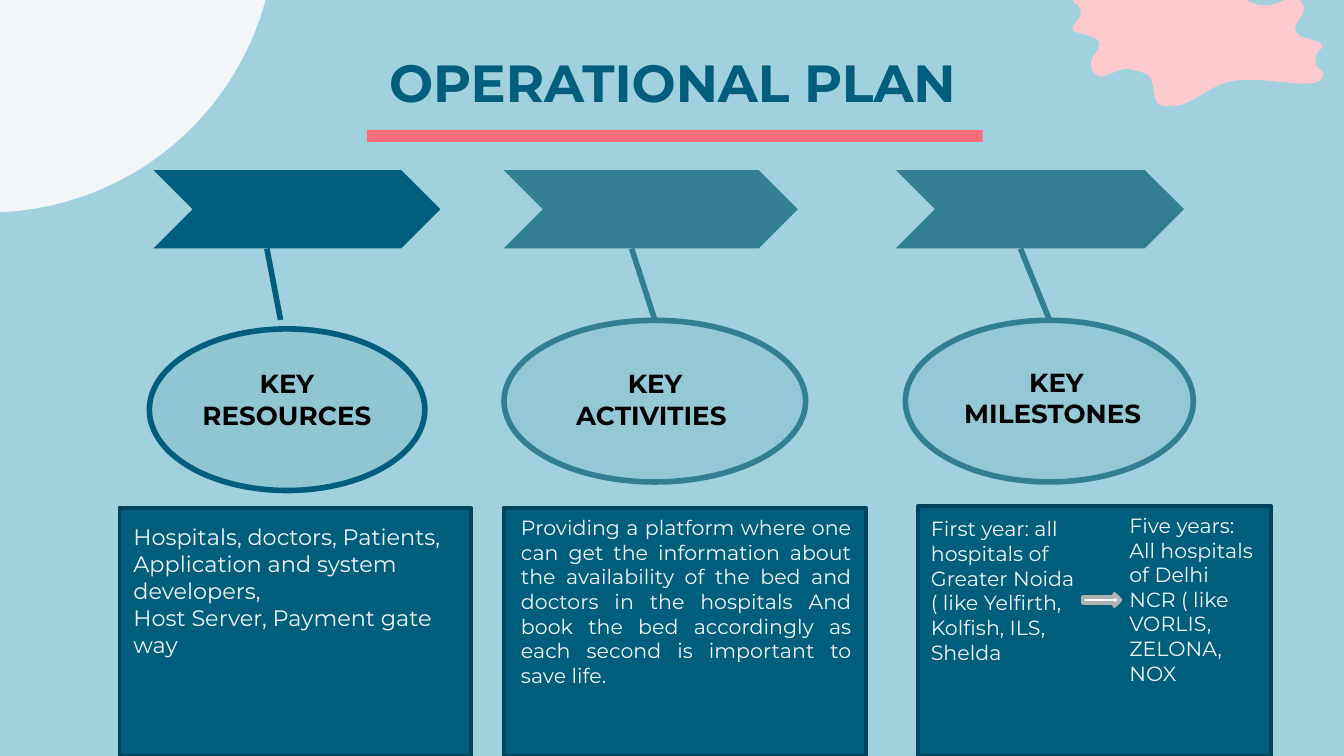
from lxml.etree import SubElement as Sub
from pptx import Presentation
from pptx.dml.color import RGBColor as RGB
from pptx.enum.shapes import MSO_CONNECTOR as Link, MSO_SHAPE as Kind
from pptx.enum.text import MSO_ANCHOR as Anchor, PP_ALIGN as Align
from pptx.oxml.ns import qn
from pptx.util import Pt

FONT = "Montserrat"
HUES = {
    "sky": "A1D1DE", "pale": "F2F6F8", "coral": "FC6D78", "blush": "FECACE",
    "navy": "005E7D", "teal": "337E92", "edge": "00445B", "gray": "B0B3B4",
    "black": "000000",
}

# Outlines in hundredths of an inch: start, then Bézier triples
UNIT = Pt(0.72)
BLOB = (984, 53), [
    (983, 51, 981, 52, 980, 50), (978, 48, 979, 44, 979, 43),
    (980, 37, 985, 36, 984, 34), (984, 29, 966, 30, 964, 23),
    (962, 17, 972, 12, 970, 5), (970, 4, 968, 0, 965, -2),
    (964, -2, 963, -2, 962, -2), (957, -2, 951, 4, 942, 4),
    (941, 4, 940, 4, 940, 4), (937, 4, 933, 3, 929, 1),
    (920, -3, 925, -17, 918, -21), (917, -22, 915, -22, 911, -22),
    (894, -22, 884, -8, 866, -4), (848, 0, 823, -8, 808, -8),
    (807, -8, 804, -7, 801, -5), (799, -4, 798, -1, 799, 2),
    (800, 3, 802, 3, 803, 5), (805, 7, 804, 10, 804, 11),
    (802, 17, 798, 18, 798, 21), (798, 26, 816, 25, 818, 32),
    (819, 38, 810, 42, 812, 50), (812, 50, 813, 55, 816, 56),
    (817, 57, 818, 57, 819, 57), (825, 57, 831, 51, 840, 51),
    (841, 51, 841, 51, 842, 52), (844, 52, 848, 53, 853, 55),
    (861, 60, 856, 73, 863, 78), (863, 78, 865, 79, 870, 79),
    (886, 80, 897, 65, 914, 61), (933, 56, 961, 64, 976, 62),
    (977, 62, 980, 62, 983, 59), (984, 58, 985, 55, 984, 53),
]
SPOT = (927, -13), [
    (929, -17, 935, -18, 940, -15), (946, -13, 949, -7, 947, -4),
    (945, 0, 939, 1, 934, -1), (928, -4, 925, -9, 927, -13),
]

# Per column: hue, chevron (x, w), oval (x, y, w), stem (x1, x2),
# card (x, y, w), label (x, y, w) and label text
COLS = [
    ("navy", (82.3, 153.7), (80, 176.2, 147.6), (143, 150.3), (64, 272, 188.5),
     (100, 193.5, 107.5), "KEY RESOURCES "),
    ("teal", (270, 157.5), (270, 171.6, 161.6), (338.4, 350.8), (269.8, 272, 194.2),
     (297.2, 193.5, 107.5), "KEY ACTIVITIES "),
    ("teal", (480, 154.3), (485, 171.6, 154.3), (546.7, 562.2), (491.6, 271.2, 189.5),
     (504.7, 192.8, 122.5), "KEY MILESTONES "),
]

# Card text: box, paragraphs, format
NOTES = [
    ((64.4, 276.8, 188.5, 80), ["Hospitals, doctors, Patients, Application and system developers,",
     "Host Server, Payment gate way"], {"size": 12}),
    ((272, 272.3, 191.3, 101), ["Providing a platform where one can get the information about "
     "the availability of the bed and doctors in the hospitals And book the bed accordingly "
     "as each second is important to save life. "], {"align": Align.JUSTIFY}),
    ((491.6, 273, 95.4, 87), ["First year: all hospitals of Greater Noida "
     "( like Yelfirth, Kolfish, ILS, Shelda"], {}),
    ((597.9, 271.2, 83.7, 101), ["Five years:",
     "All hospitals of Delhi NCR ( like VORLIS, ZELONA, NOX"], {}),
]


def hue(name):
    return RGB.from_string(HUES[name])


def paint(shape, fill, line=None, width=0, alpha=None):
    shape.shadow.inherit = False
    shape.fill.solid()
    shape.fill.fore_color.rgb = hue(fill)
    if alpha:
        clr = shape._element.spPr.find(qn("a:solidFill")).find(qn("a:srgbClr"))
        Sub(clr, qn("a:alpha"), val=str(alpha * 1000))
    if line:
        shape.line.color.rgb = hue(line)
        shape.line.width = Pt(width)
    else:
        shape.line.fill.background()


def shape(slide, kind, box, fill, **look):
    item = slide.shapes.add_shape(kind, *map(Pt, box))
    paint(item, fill, **look)


def write(frame, paras, size=11, color="pale", bold=False, align=Align.LEFT):
    frame.word_wrap = True
    for i, text in enumerate(paras):
        para = frame.add_paragraph() if i else frame.paragraphs[0]
        para.text = text
        para.alignment = align
        font = para.font
        font.name, font.size, font.bold = FONT, Pt(size), bold
        font.color.rgb = hue(color)


def label(slide, box, paras, **form):
    item = slide.shapes.add_textbox(*map(Pt, box))
    write(item.text_frame, paras, **form)


def stem(slide, x1, x2, color):
    item = slide.shapes.add_connector(Link.STRAIGHT, Pt(x1), Pt(133.2), Pt(x2), Pt(171.4))
    item.line.color.rgb = hue(color)
    item.line.width = Pt(3)
    Sub(item._element.spPr, qn("a:effectLst"))


def curve(slide, start, arcs, fill):
    dots = [arc[i:i + 2] for arc in arcs for i in (0, 2, 4)]
    pen = slide.shapes.build_freeform(*start, scale=UNIT)
    pen.add_line_segments(dots, close=True)
    item = pen.convert_to_shape()
    paint(item, fill)
    # Turn every three line steps into one Bézier step
    steps = list(item._element.iter(qn("a:lnTo")))[:len(dots)]
    for i in range(0, len(steps), 3):
        bez = steps[i].makeelement(qn("a:cubicBezTo"))
        steps[i].addprevious(bez)
        for step in steps[i:i + 3]:
            bez.append(step[0])
            step.getparent().remove(step)


def head(slide):
    title = slide.shapes.title
    title.left, title.top, title.width, title.height = map(Pt, (56.7, 19.8, 607, 45.4))
    frame = title.text_frame
    frame.vertical_anchor = Anchor.TOP
    frame.margin_top = frame.margin_bottom = Pt(7.2)
    write(frame, ["OPERATIONAL PLAN"], size=28, color="navy", bold=True, align=Align.CENTER)


def main():
    deck = Presentation()
    deck.slide_width, deck.slide_height = Pt(720), Pt(405)
    slide = deck.slides.add_slide(deck.slide_layouts[5])
    slide.background.fill.solid()
    slide.background.fill.fore_color.rgb = hue("sky")

    # Backdrop and title
    shape(slide, Kind.OVAL, (-160.6, -194.4, 308.2, 308.2), "pale")
    shape(slide, Kind.RECTANGLE, (196.6, 69.6, 329.8, 6.4), "coral")
    for start, arcs in (BLOB, SPOT):
        curve(slide, start, arcs, "blush")
    head(slide)

    # Columns
    for color, (vx, vw), (ox, oy, ow), (x1, x2), (cx, cy, cw), (lx, ly, lw), text in COLS:
        shape(slide, Kind.OVAL, (ox, oy, ow, 86.6), color, line=color, width=3, alpha=10)
        shape(slide, Kind.CHEVRON, (vx, 91.2, vw, 41.8), color)
        stem(slide, x1, x2, color)
        shape(slide, Kind.RECTANGLE, (cx, cy, cw, 405 - cy), "navy", line="edge", width=2)
        label(slide, (lx, ly, lw, 41), [text], size=14, color="black",
              bold=True, align=Align.CENTER)

    # Card text and the arrow between the milestones
    for box, paras, form in NOTES:
        label(slide, box, paras, **form)
    shape(slide, Kind.RIGHT_ARROW, (580, 318.2, 20.2, 6.5), "pale", line="gray", width=2)

    deck.save("out.pptx")


if __name__ == "__main__":
    main()
